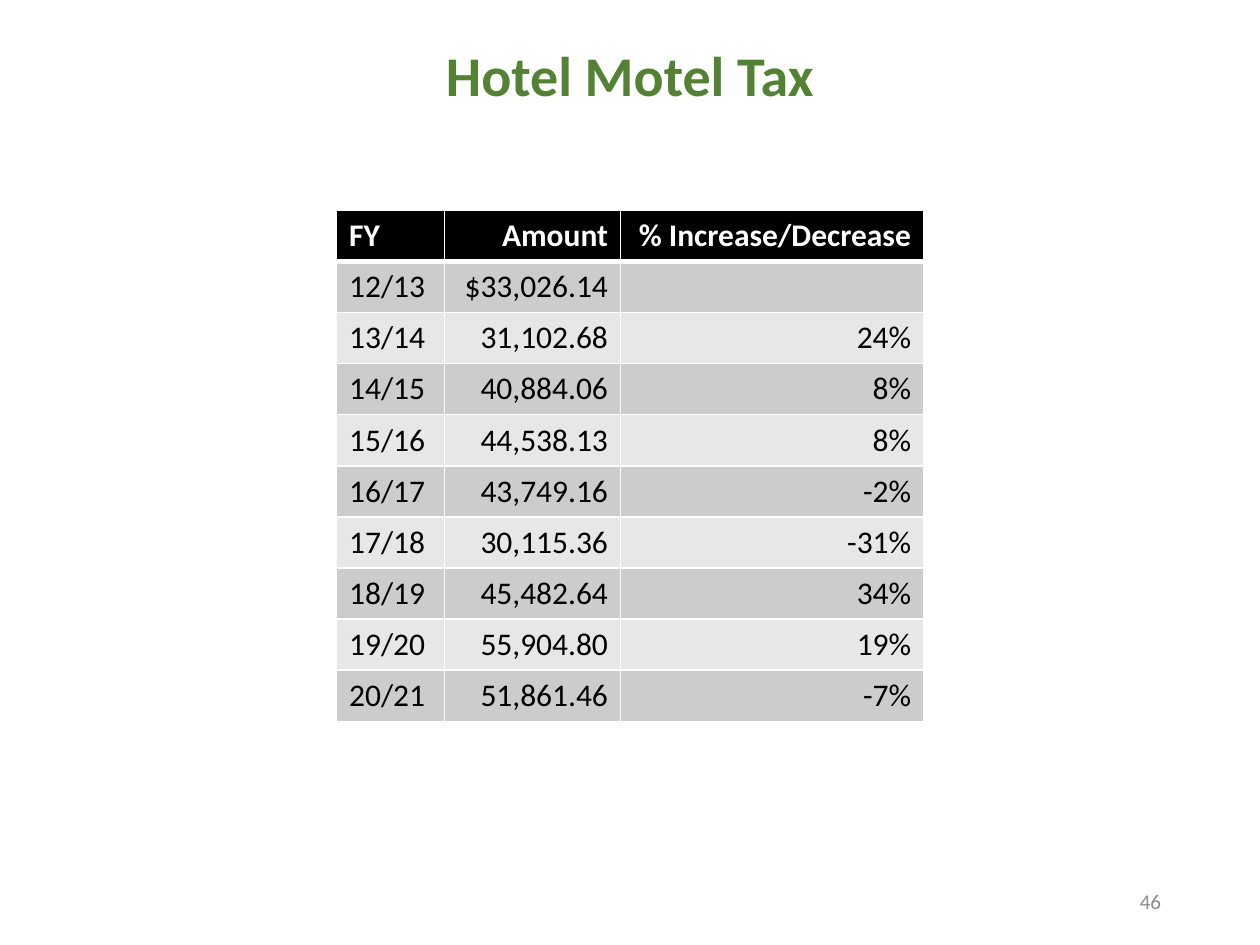
import lxml.etree
import pptx
import pptx.dml.color
import pptx.enum.text
import pptx.oxml.ns
import pptx.util

Pt = pptx.util.Pt
Align = pptx.enum.text.PP_ALIGN
Anchor = pptx.enum.text.MSO_ANCHOR


def tint(code):
    return pptx.dml.color.RGBColor.from_string(code)


class Page:
    """Holds the slide and its style, and draws text and tables."""

    font = "Calibri"
    dark = "000000"
    light = "FFFFFF"
    bands = ("CCCCCC", "E7E7E7")

    def __init__(self, slide):
        self.slide = slide

    def style(self, para, size, color, bold, align):
        para.alignment = align
        for run in para.runs:
            run.font.name = self.font
            run.font.size = Pt(size)
            run.font.bold = bold
            run.font.color.rgb = tint(color)

    def text(self, words, box, size, color, align, bold=False, space=1.0):
        frame = self.slide.shapes.add_textbox(*map(Pt, box)).text_frame
        frame.word_wrap = True
        frame.vertical_anchor = Anchor.MIDDLE
        frame.text = words
        para = frame.paragraphs[0]
        para.line_spacing = space
        self.style(para, size, color, bold, align)

    def border(self, cell, side, width):
        qn = pptx.oxml.ns.qn
        props = cell._tc.get_or_add_tcPr()
        line = lxml.etree.SubElement(props, qn("a:ln" + side), w=str(Pt(width)))
        fill = lxml.etree.SubElement(line, qn("a:solidFill"))
        lxml.etree.SubElement(fill, qn("a:srgbClr"), val=self.light)

    def cell(self, cell, words, head, fill, align):
        for side in "LRTB":
            self.border(cell, side, 3 if head and side == "B" else 1)
        cell.fill.solid()
        cell.fill.fore_color.rgb = tint(fill)
        cell.text = words
        color = self.light if head else self.dark
        self.style(cell.text_frame.paragraphs[0], 18, color, head, align)

    def table(self, data, left, top, widths, height):
        size = map(Pt, (left, top, sum(widths), height * len(data)))
        table = self.slide.shapes.add_table(len(data), len(widths), *size).table
        for col, width in zip(table.columns, widths):
            col.width = Pt(width)
        for r, row in enumerate(data):
            table.rows[r].height = Pt(height)
            head = r == 0
            fill = self.dark if head else self.bands[(r - 1) % 2]
            for c, words in enumerate(row):
                align = Align.RIGHT if c else Align.LEFT
                self.cell(table.cell(r, c), words, head, fill, align)


TAXES = [
    ("FY", "Amount", "% Increase/Decrease"),
    ("12/13", "$33,026.14", ""),
    ("13/14", "31,102.68", "24%"),
    ("14/15", "40,884.06", "8%"),
    ("15/16", "44,538.13", "8%"),
    ("16/17", "43,749.16", "-2%"),
    ("17/18", "30,115.36", "-31%"),
    ("18/19", "45,482.64", "34%"),
    ("19/20", "55,904.80", "19%"),
    ("20/21", "51,861.46", "-7%"),
]


def main():
    deck = pptx.Presentation()
    deck.slide_width, deck.slide_height = Pt(720), Pt(540)
    page = Page(deck.slides.add_slide(deck.slide_layouts[6]))
    page.text("Hotel Motel Tax", (54, 0, 612, 90), 32, "548235",
              Align.CENTER, bold=True, space=0.9)
    page.text("46", (508.5, 500.5, 162, 28.8), 12, "8C8C8C", Align.RIGHT)
    page.table(TAXES, 192.3, 120.2, (61.8, 100.6, 173.2), 29.2)
    deck.save("out.pptx")


if __name__ == "__main__":
    main()
